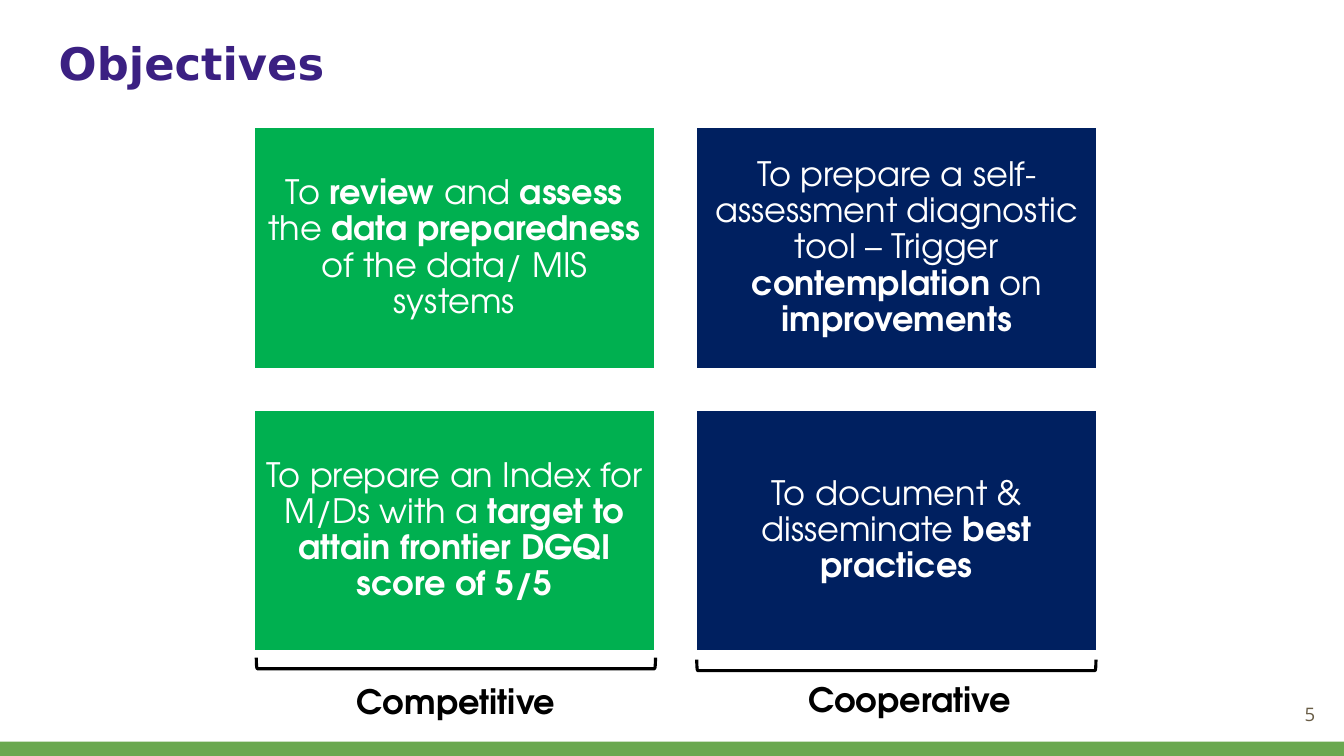
"""Build the Objectives slide: four goals in a two-by-two grid."""
from dataclasses import dataclass

from pptx import Presentation
from pptx.dml.color import RGBColor
from pptx.enum.shapes import MSO_SHAPE as Preset
from pptx.enum.text import MSO_ANCHOR as Anchor, MSO_AUTO_SIZE as AutoSize, PP_ALIGN as Align
from pptx.util import Cm, Pt


@dataclass(frozen=True)
class Theme:
    """Colours, fonts and type sizes of the slide."""
    purple: str = "3B2082"
    green: str = "00B050"
    navy: str = "002060"
    strip: str = "6AA84F"
    white: str = "FFFFFF"
    black: str = "000000"
    brown: str = "695D46"
    title_font: str = "DejaVu Sans"
    body_font: str = "TeX Gyre Adventor"
    number_font: str = "Open Sans"
    title_size: float = 32
    body_size: float = 24
    number_size: float = 13.3


THEME = Theme()
CARD_LEFT, CARD_TOP = 6.38, 3.2
CARD_WIDTH, CARD_HEIGHT = 10.14, 6.1
COLUMN_STEP, ROW_STEP = 11.15, 7.12
BRACKET_DEPTH, BRACKET_SPAN = 0.28, 10.06
LABEL_WIDTH, LABEL_HEIGHT = 6.53, 1.27

CARD_ROWS = (
    ("To *review* and *assess* the *data preparedness *of the data/ MIS systems",
     "To prepare a self-assessment diagnostic tool – Trigger *contemplation* on *improvements*"),
    ("To prepare an Index for M/Ds with a *target to attain frontier DGQI score of 5/5*",
     "To document & disseminate *best practices*"),
)
COLUMN_COLOURS = (THEME.green, THEME.navy)
GROUPS = (
    ("Competitive", 11.49, 16.71, 17.04),
    ("Cooperative", 22.59, 16.76, 16.99),
)


def rgb(colour):
    """Turn a hex string into a colour."""
    return RGBColor.from_string(colour)


def write(shape, text, font, size, colour, align, anchor, margins=(0.25, 0.25), spacing=None):
    """Fill a shape with one paragraph in which *asterisks* mark bold runs."""
    frame = shape.text_frame
    frame.word_wrap = True
    frame.auto_size = AutoSize.NONE
    frame.vertical_anchor = anchor
    frame.margin_left = frame.margin_right = Cm(margins[0])
    frame.margin_top = frame.margin_bottom = Cm(margins[1])
    paragraph = frame.paragraphs[0]
    paragraph.alignment = align
    paragraph.line_spacing = spacing
    for index, part in enumerate(text.split("*")):
        if part:
            run = paragraph.add_run()
            run.text = part
            run.font.name = font
            run.font.size = Pt(size)
            run.font.bold = index % 2 == 1
            run.font.color.rgb = rgb(colour)


def add_title(slide, text):
    """Place and format the title placeholder."""
    title = slide.shapes.title
    title.left, title.top, title.width, title.height = Cm(1.15), Cm(0.58), Cm(31.55), Cm(2.62)
    write(title, f"*{text}*", THEME.title_font, THEME.title_size, THEME.purple,
          Align.LEFT, Anchor.TOP, (0.33, 0.33))


def add_box(slide, left, top, width, height, colour):
    """Add a plain filled rectangle without outline."""
    shape = slide.shapes.add_shape(Preset.RECTANGLE, Cm(left), Cm(top), Cm(width), Cm(height))
    shape.shadow.inherit = False
    shape.fill.solid()
    shape.fill.fore_color.rgb = rgb(colour)
    shape.line.fill.background()
    return shape


def add_card(slide, row, column, text):
    """Add one goal card at its place in the grid."""
    card = add_box(slide, CARD_LEFT + column * COLUMN_STEP, CARD_TOP + row * ROW_STEP,
                   CARD_WIDTH, CARD_HEIGHT, COLUMN_COLOURS[column])
    card.line.color.rgb = rgb(THEME.white)
    card.line.width = Pt(2)
    write(card, text, THEME.body_font, THEME.body_size, THEME.white,
          Align.CENTER, Anchor.MIDDLE, spacing=0.9)


def add_bracket(slide, centre_x, centre_y):
    """Add a bracket that lies under a column and opens upwards."""
    bracket = slide.shapes.add_shape(
        Preset.LEFT_BRACKET, Cm(centre_x - BRACKET_DEPTH / 2), Cm(centre_y - BRACKET_SPAN / 2),
        Cm(BRACKET_DEPTH), Cm(BRACKET_SPAN))
    bracket.rotation = 270
    bracket.adjustments[0] = 0.08
    bracket.shadow.inherit = False
    bracket.fill.background()
    bracket.line.color.rgb = rgb(THEME.black)
    bracket.line.width = Pt(2.25)


def add_label(slide, text, centre_x, top):
    """Add the bold name of a column."""
    label = slide.shapes.add_textbox(Cm(centre_x - LABEL_WIDTH / 2), Cm(top),
                                     Cm(LABEL_WIDTH), Cm(LABEL_HEIGHT))
    write(label, f"*{text}*", THEME.body_font, THEME.body_size, THEME.black,
          Align.CENTER, Anchor.TOP, (0.25, 0.13))


def add_page_number(slide, text):
    """Add the page number at the lower right."""
    number = slide.shapes.add_textbox(Cm(31.37), Cm(17.27), Cm(2.03), Cm(1.45))
    write(number, text, THEME.number_font, THEME.number_size, THEME.brown,
          Align.RIGHT, Anchor.MIDDLE)


def main():
    """Build and save the presentation."""
    presentation = Presentation()
    presentation.slide_width, presentation.slide_height = Cm(33.87), Cm(19.05)
    slide = presentation.slides.add_slide(presentation.slide_layouts[5])
    add_box(slide, 0, 18.69, 33.87, 0.36, THEME.strip)
    add_title(slide, "Objectives")
    for row, texts in enumerate(CARD_ROWS):
        for column, text in enumerate(texts):
            add_card(slide, row, column, text)
    add_page_number(slide, "5")
    for name, centre_x, bracket_y, label_top in GROUPS:
        add_bracket(slide, centre_x, bracket_y)
        add_label(slide, name, centre_x + (0.33 if name == "Cooperative" else 0), label_top)
    presentation.save("out.pptx")


if __name__ == "__main__":
    main()
